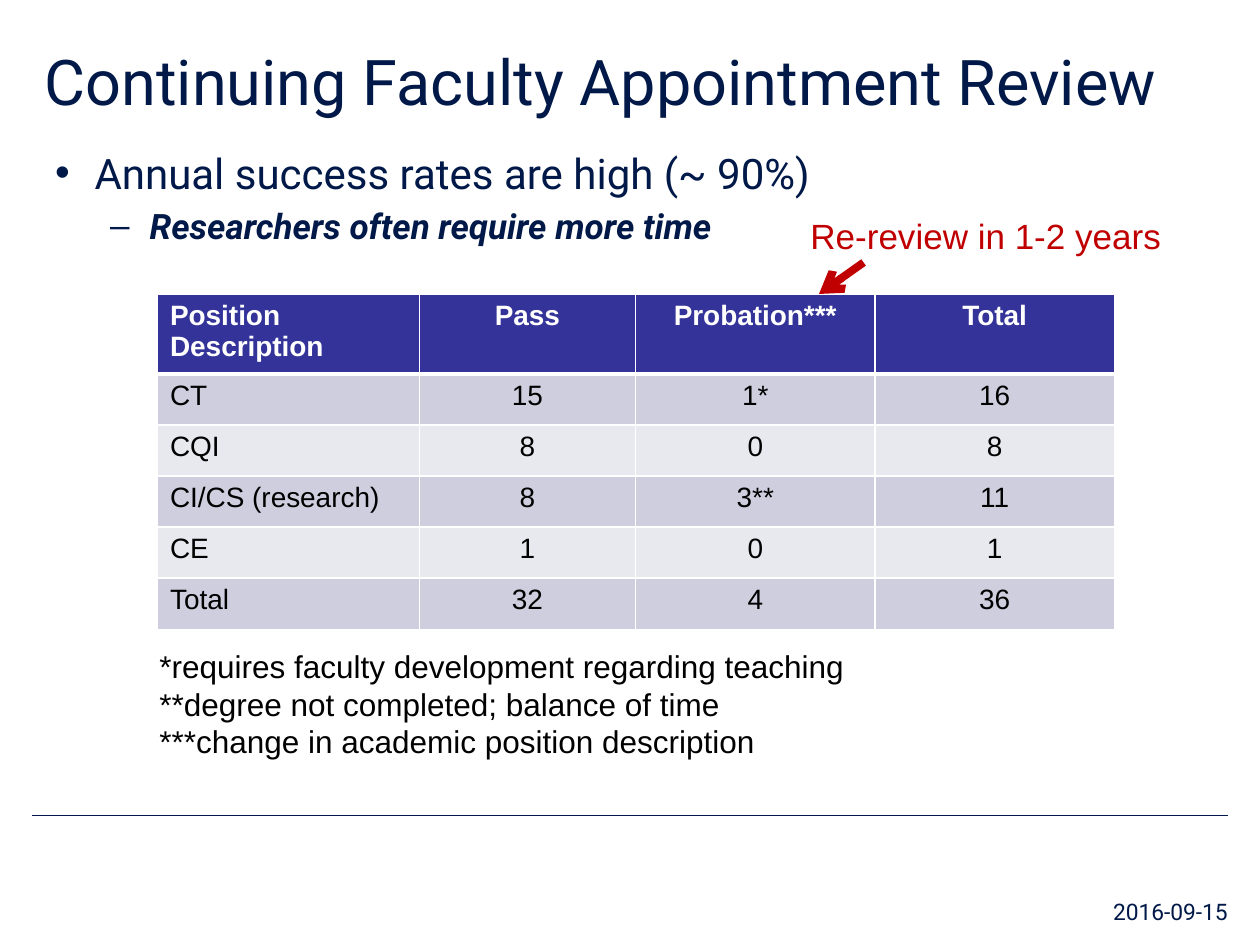
from lxml.etree import SubElement
from pptx import Presentation
from pptx.dml.color import RGBColor
from pptx.enum.shapes import MSO_CONNECTOR as Connector
from pptx.enum.text import MSO_ANCHOR as Anchor, MSO_AUTO_SIZE as AutoSize, PP_ALIGN as Align
from pptx.oxml.ns import qn
from pptx.util import Pt

# Content
TITLE = "Continuing Faculty Appointment Review"
# text, bullet, left margin, space before, font format
BULLETS = [
    ("Annual success rates are high (~ 90%)", "•", 27, 0, {"size": Pt(24)}),
    ("Researchers often require more time", "–", 58.5, 4,
     {"size": Pt(20), "bold": True, "italic": True}),
]
HANGING = 22.5
ROWS = [
    ("Position Description", "Pass", "Probation***", "Total"),
    ("CT", "15", "1*", "16"),
    ("CQI", "8", "0", "8"),
    ("CI/CS (research)", "8", "3**", "11"),
    ("CE", "1", "0", "1"),
    ("Total", "32", "4", "36"),
]
COLUMN_WIDTHS = (149.6, 123.6, 136.8, 136.8)
HEADER_HEIGHT, ROW_HEIGHT = 42, 29.2
FOOTNOTES = [
    "*requires faculty development regarding teaching",
    "**degree not completed; balance of time",
    "***change in academic position description",
]
CALLOUT = "Re-review in 1-2 years"
DATE = "2016-09-15"

# Colours
NAVY = RGBColor(0x00, 0x19, 0x48)
RED = RGBColor(0xC0, 0x00, 0x00)
BLACK = RGBColor(0x00, 0x00, 0x00)
WHITE = RGBColor(0xFF, 0xFF, 0xFF)
HEADER_FILL = RGBColor(0x33, 0x33, 0x99)
BAND_FILLS = (RGBColor(0xE8, 0xE8, 0xEF), RGBColor(0xCE, 0xCE, 0xDE))


def set_font(para, name, color, **formats):
    for span in para.runs:
        span.font.name = name
        span.font.color.rgb = color
        for key, value in formats.items():
            setattr(span.font, key, value)


def set_frame(frame, **formats):
    for key, value in formats.items():
        setattr(frame, key, value)


def add_text(page, place, lines, name, color, size, **formats):
    box = page.shapes.add_textbox(*map(Pt, place))
    set_frame(box.text_frame, **formats)
    box.text_frame.text = "\n".join(lines)
    for para in box.text_frame.paragraphs:
        set_font(para, name, color, size=Pt(size))
    return box


def add_bullet(para, symbol, margin):
    props = para._p.get_or_add_pPr()
    props.set("marL", str(Pt(margin)))
    props.set("indent", str(-Pt(HANGING)))
    SubElement(props, qn("a:buFont"), typeface="Arial")
    SubElement(props, qn("a:buChar"), char=symbol)


def add_line(page, start, end, color, width, arrow=False):
    line = page.shapes.add_connector(Connector.STRAIGHT, *map(Pt, start + end))
    line.line.color.rgb = color
    line.line.width = Pt(width)
    if arrow:
        SubElement(line.line._get_or_add_ln(), qn("a:tailEnd"), type="arrow")
    SubElement(line._element.spPr, qn("a:effectLst"))


def add_borders(cell, widths):
    props = cell._tc.get_or_add_tcPr()
    for index, (side, width) in enumerate(widths.items()):
        border = props.makeelement(qn(f"a:ln{side}"), {"w": str(Pt(width))})
        fill = SubElement(border, qn("a:solidFill"))
        SubElement(fill, qn("a:srgbClr"), val=str(WHITE))
        props.insert(index, border)


def add_review_table(page):
    height = HEADER_HEIGHT + ROW_HEIGHT * (len(ROWS) - 1)
    place = map(Pt, (90, 168, sum(COLUMN_WIDTHS), height))
    table = page.shapes.add_table(len(ROWS), len(COLUMN_WIDTHS), *place).table
    for column, width in zip(table.columns, COLUMN_WIDTHS):
        column.width = Pt(width)
    for r, texts in enumerate(ROWS):
        header = r == 0
        table.rows[r].height = Pt(HEADER_HEIGHT if header else ROW_HEIGHT)
        for c, text in enumerate(texts):
            cell = table.cell(r, c)
            cell.text = text
            cell.fill.solid()
            cell.fill.fore_color.rgb = HEADER_FILL if header else BAND_FILLS[r % 2]
            add_borders(cell, {"L": 1, "R": 1, "T": 3 if r == 1 else 1,
                               "B": 3 if header else 1})
            para = cell.text_frame.paragraphs[0]
            para.alignment = Align.CENTER if c else Align.LEFT
            set_font(para, "Arial", WHITE if header else BLACK, size=Pt(16), bold=header)


def main():
    deck = Presentation()
    deck.slide_width, deck.slide_height = Pt(720), Pt(540)
    page = deck.slides.add_slide(deck.slide_layouts[5])
    tight = {"margin_left": Pt(3), "margin_right": Pt(3), "margin_top": 0,
             "margin_bottom": 0, "word_wrap": True}

    # Footer rule
    add_line(page, (18, 466), (701.5, 466), NAVY, 0.75)

    # Title
    title = page.shapes.title
    title.left, title.top, title.width, title.height = map(Pt, (18, 24, 684, 66))
    set_frame(title.text_frame, text=TITLE, vertical_anchor=Anchor.TOP,
              auto_size=AutoSize.NONE, **tight)
    para = title.text_frame.paragraphs[0]
    para.alignment = Align.LEFT
    para._p.get_or_add_pPr().set("marL", str(Pt(4.5)))
    set_font(para, "Roboto", NAVY, size=Pt(36))

    # Bullets
    body = add_text(page, (24, 84, 684, 348), [item[0] for item in BULLETS],
                    "Roboto", NAVY, 24, **tight)
    for para, (_, symbol, margin, before, formats) in zip(body.text_frame.paragraphs, BULLETS):
        add_bullet(para, symbol, margin)
        para.space_before = Pt(before)
        set_font(para, "Roboto", NAVY, **formats)

    # Date
    date = add_text(page, (551.5, 497.5, 150, 31), [DATE], "Roboto", NAVY, 13,
                    **{**tight, "margin_left": 0, "margin_right": 0},
                    vertical_anchor=Anchor.BOTTOM)
    date.text_frame.paragraphs[0].alignment = Align.RIGHT

    # Table and footnotes
    add_review_table(page)
    notes = add_text(page, (84, 366, 410, 72.7), FOOTNOTES, "Arial", BLACK, 18,
                     word_wrap=False)
    notes.fill.solid()
    notes.fill.fore_color.rgb = WHITE

    # Callout with arrow
    add_text(page, (456, 119, 216.7, 31.5), [CALLOUT], "Arial", RED, 20, word_wrap=False)
    add_line(page, (493.5, 150), (468, 168), RED, 4.5, arrow=True)

    deck.save("out.pptx")


if __name__ == "__main__":
    main()
